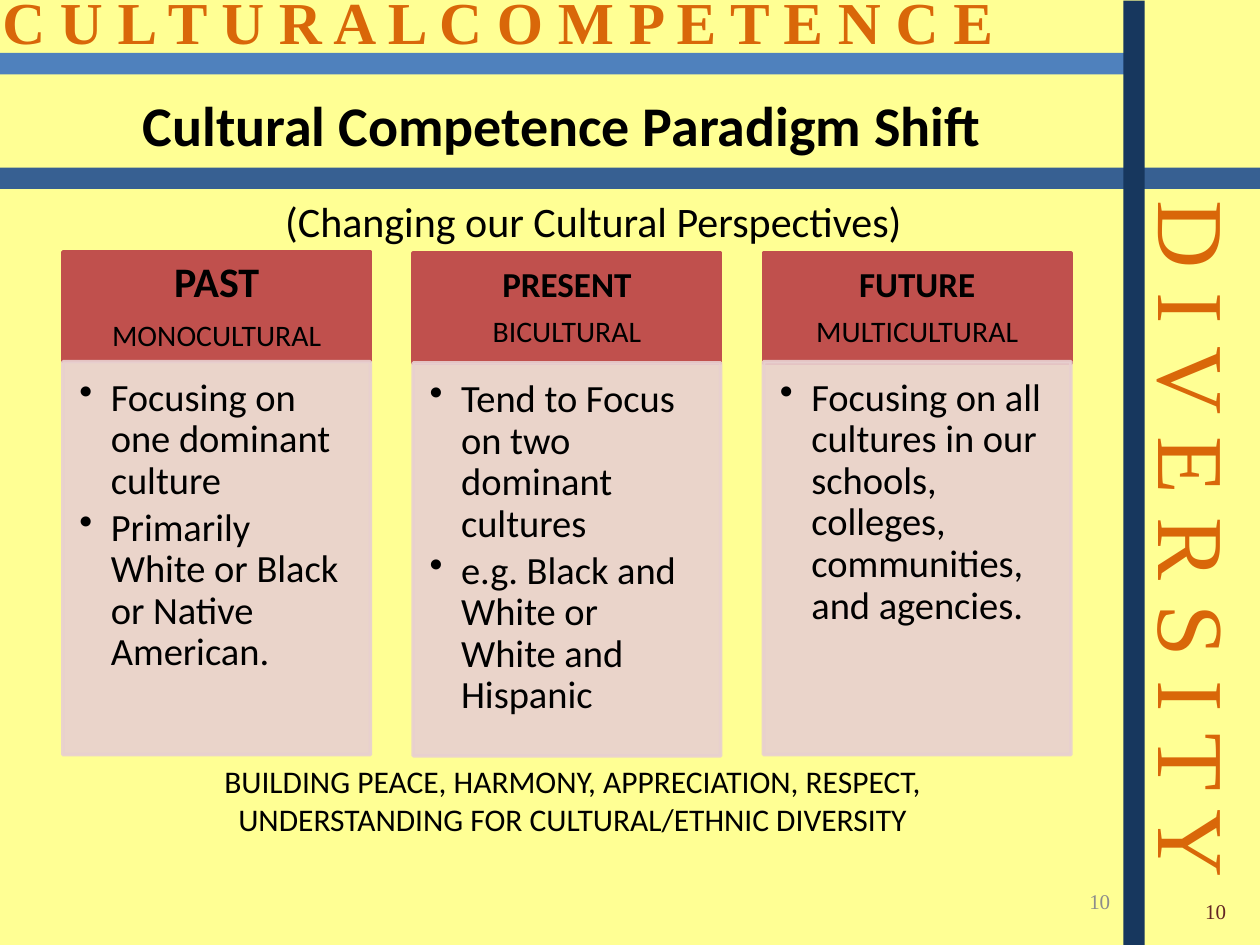
from lxml import etree
from pptx import Presentation
from pptx.dml.color import RGBColor
from pptx.enum import shapes, text
from pptx.oxml.ns import qn
from pptx.util import Inches, Pt

COLORS = {
    "page": "FFFF94", "top bar": "4F81BD", "title bar": "376092", "side bar": "17375E",
    "banner": "D96709", "ink": "000000", "header": "C0504D", "body": "E8D0D0",
    "muted": "8C8C8C", "maroon": "632523",
}
SANS, SERIF = "Calibri", "Times New Roman"
LEFT, CENTER, RIGHT = text.PP_ALIGN.LEFT, text.PP_ALIGN.CENTER, text.PP_ALIGN.RIGHT
TOP, MIDDLE = text.MSO_ANCHOR.TOP, text.MSO_ANCHOR.MIDDLE

# Content: left, top, width, height, rotation
BARS = [
    ("top bar", (0, 0.42, 8.92, 0.17), 0),
    ("title bar", (0, 1.33, 10, 0.17), 0),
    ("side bar", (5.25, 3.67, 7.5, 0.17), 90),
]
# Words, place, rotation, size, font, colour, bold, alignment, anchor
LABELS = [
    ("C U L T U R A L C O M P E T E N C E", (-0.08, -0.17, 9.33, 0.67), 0,
     34, SERIF, "banner", True, LEFT, TOP),
    ("D I V E R S I T Y", (6.49, 3.99, 6, 1.01), 90, 54, SERIF, "banner", False, LEFT, TOP),
    ("10", (6.58, 6.95, 2.33, 0.4), 0, 12, SERIF, "muted", False, RIGHT, MIDDLE),
    ("Cultural Competence Paradigm Shift", (0, 0.67, 8.92, 0.67), 0,
     32, SANS, "ink", True, CENTER, TOP),
    ("10", (9, 7.08, 0.83, 0.27), 0, 12, SERIF, "maroon", False, RIGHT, TOP),
    ("BUILDING PEACE, HARMONY, APPRECIATION, RESPECT, UNDERSTANDING FOR CULTURAL/ETHNIC DIVERSITY",
     (1.42, 6, 6.25, 0.71), 0, 18, SANS, "ink", False, CENTER, TOP),
    ("(Changing our Cultural Perspectives)", (1.67, 1.5, 6.08, 0.51), 0,
     24, SANS, "ink", False, CENTER, TOP),
]
# Era, era size, culture, header top, body top, bullets
STAGES = [
    ("PAST", 24, "MONOCULTURAL", 2, 2.87,
     ["Focusing on one dominant culture", "Primarily White or Black or Native American."]),
    ("PRESENT", 20, "BICULTURAL", 2.01, 2.88,
     ["Tend to Focus on two dominant cultures", "e.g. Black and White or White and Hispanic"]),
    ("FUTURE", 20, "MULTICULTURAL", 2.01, 2.87,
     ["Focusing on all cultures in our schools, colleges, communities, and agencies."]),
]
STAGE_LEFT, STAGE_STEP, STAGE_WIDTH = 0.5, 2.78, 2.44
HEADER_HEIGHT, BODY_HEIGHT = 0.87, 3.12


def color(name):
    return RGBColor.from_string(COLORS[name])


def add_rect(page, place, fill, outlined=False):
    rect = page.shapes.add_shape(shapes.MSO_SHAPE.RECTANGLE, *map(Inches, place))
    rect.shadow.inherit = False
    rect.fill.solid()
    rect.fill.fore_color.rgb = color(fill)
    if outlined:
        rect.line.color.rgb = color(fill)
        rect.line.width = Pt(2)
    else:
        rect.line.fill.background()
    return rect


def set_frame(box, anchor, insets=(0.1, 0.05, 0.1, 0.05)):
    frame = box.text_frame
    frame.word_wrap = True
    frame.vertical_anchor = anchor
    frame.margin_left, frame.margin_top, frame.margin_right, frame.margin_bottom = map(Inches, insets)
    return frame


def style(para, size, font=SANS, ink="ink", bold=False, align=LEFT):
    para.alignment = align
    for span in para.runs:
        span.font.size = Pt(size)
        span.font.name = font
        span.font.bold = bold
        span.font.color.rgb = color(ink)


def add_bullet(para):
    props = para._p.get_or_add_pPr()
    props.set("marL", str(Inches(0.25)))
    props.set("indent", str(-Inches(0.25)))
    etree.SubElement(props, qn("a:buChar"), char="•")


def make_translucent(rect, percent):
    for tint in rect._element.spPr.iter(qn("a:srgbClr")):
        etree.SubElement(tint, qn("a:alpha"), val=str(percent * 1000))


deck = Presentation()
deck.slide_width, deck.slide_height = Inches(10), Inches(7.5)
page = deck.slides.add_slide(deck.slide_layouts[6])
page.background.fill.solid()
page.background.fill.fore_color.rgb = color("page")

# Bars
for fill, place, turn in BARS:
    add_rect(page, place, fill).rotation = turn

# Banners, title, captions and page numbers
for words, place, turn, size, font, ink, bold, align, anchor in LABELS:
    box = page.shapes.add_textbox(*map(Inches, place))
    box.rotation = turn
    frame = set_frame(box, anchor)
    frame.text = words
    style(frame.paragraphs[0], size, font, ink, bold, align)

# Three stages: a header above a bulleted body
for index, (era, era_size, culture, header_top, body_top, bullets) in enumerate(STAGES):
    left = STAGE_LEFT + index * STAGE_STEP

    header = add_rect(page, (left, header_top, STAGE_WIDTH, HEADER_HEIGHT), "header", True)
    side, edge = era_size * 0.008, era_size * 0.0045
    frame = set_frame(header, MIDDLE, (side, edge, side, edge))
    frame.text = f"{era}\n{culture}"
    for para, size, bold in zip(frame.paragraphs, (era_size, 17), (True, False)):
        style(para, size, bold=bold, align=CENTER)
        para.line_spacing = 0.9
        para.space_after = Pt(round(size * 0.35))

    body = add_rect(page, (left, body_top, STAGE_WIDTH, BODY_HEIGHT), "body", True)
    make_translucent(body, 90)
    frame = set_frame(body, TOP, (0.13, 0.13, 0.17, 0.19))
    frame.text = "\n".join(bullets)
    for para in frame.paragraphs:
        style(para, 22)
        para.line_spacing = 0.9
        para.space_after = Pt(3)
        add_bullet(para)

deck.save("out.pptx")
